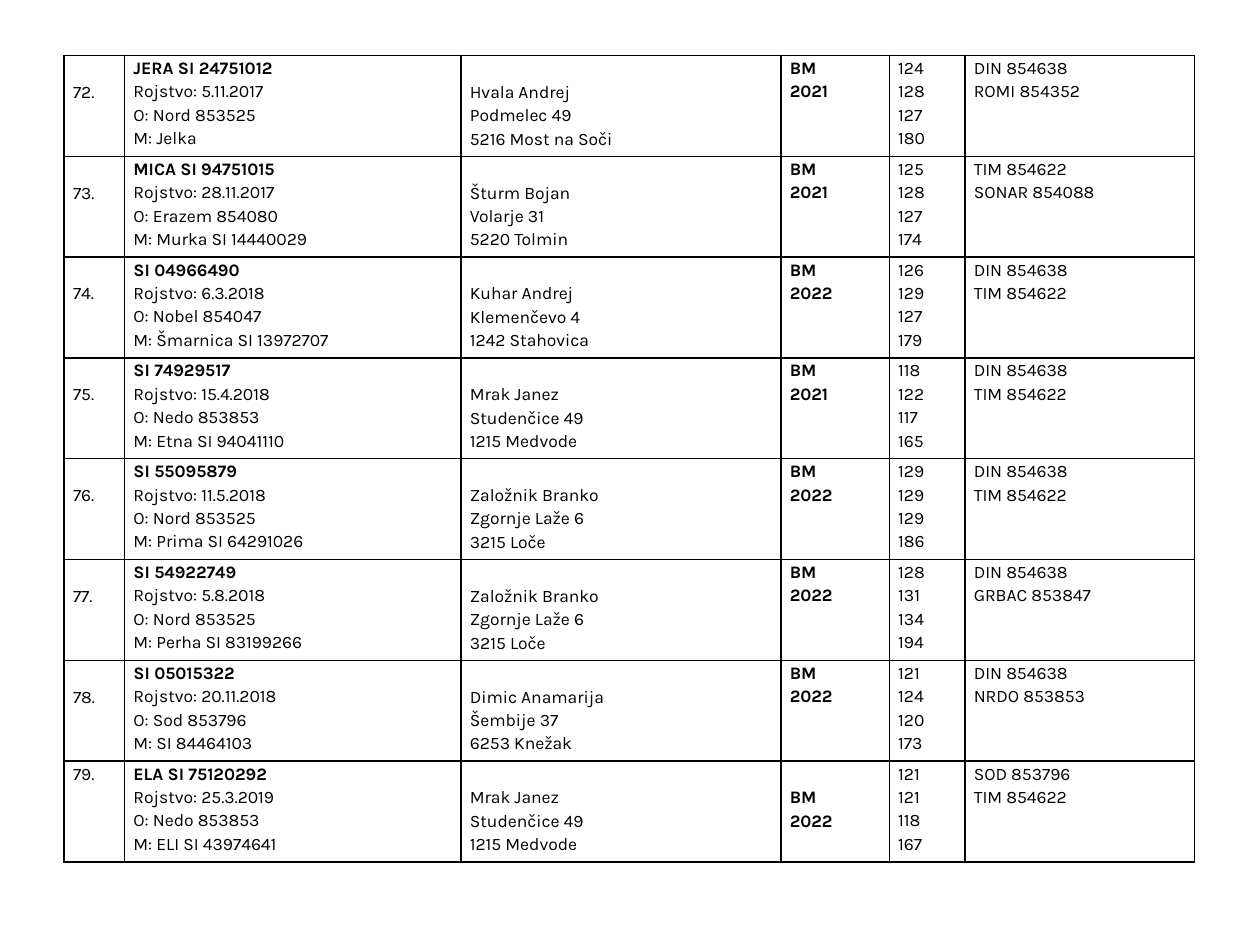
from dataclasses import dataclass

from lxml.etree import SubElement
from pptx import Presentation
from pptx.dml.color import RGBColor
from pptx.enum.text import PP_ALIGN as Align
from pptx.oxml.ns import qn
from pptx.util import Inches, Pt

COLORS = {"ink": "000000", "paper": "FFFFFF"}
FONT = "Karla"
COLUMN_WIDTHS = (0.48, 2.67, 2.54, 0.86, 0.6, 1.82)
ROW_HEIGHT = 0.8
TEXT_LINE = 0.19  # height of one line of text, in inches


@dataclass(frozen=True)
class Animal:
    number: int
    name: str
    born: str
    father: str
    mother: str
    owner: tuple[str, str, str]
    year: int
    scores: tuple[int, int, int, int]
    mates: tuple[str, str]
    number_drop: int = 1  # lines left free above the number
    status_drop: int = 0  # lines left free above the status


DIN, TIM = "DIN 854638", "TIM 854622"
MRAK = ("Mrak Janez", "Studenčice 49", "1215 Medvode")
ZALOZNIK = ("Založnik Branko", "Zgornje Laže 6", "3215 Loče")

ANIMALS = (
    Animal(72, "JERA SI 24751012", "5.11.2017", "Nord 853525", "Jelka",
           ("Hvala Andrej", "Podmelec 49", "5216 Most na Soči"),
           2021, (124, 128, 127, 180), (DIN, "ROMI 854352")),
    Animal(73, "MICA SI 94751015", "28.11.2017", "Erazem 854080", "Murka SI 14440029",
           ("Šturm Bojan", "Volarje 31", "5220 Tolmin"),
           2021, (125, 128, 127, 174), (TIM, "SONAR 854088")),
    Animal(74, "SI 04966490", "6.3.2018", "Nobel 854047", "Šmarnica SI 13972707",
           ("Kuhar Andrej", "Klemenčevo 4", "1242 Stahovica"),
           2022, (126, 129, 127, 179), (DIN, TIM)),
    Animal(75, "SI 74929517", "15.4.2018", "Nedo 853853", "Etna SI 94041110",
           MRAK, 2021, (118, 122, 117, 165), (DIN, TIM)),
    Animal(76, "SI 55095879", "11.5.2018", "Nord 853525", "Prima SI 64291026",
           ZALOZNIK, 2022, (129, 129, 129, 186), (DIN, TIM)),
    Animal(77, "SI 54922749", "5.8.2018", "Nord 853525", "Perha SI 83199266",
           ZALOZNIK, 2022, (128, 131, 134, 194), (DIN, "GRBAC 853847")),
    Animal(78, "SI 05015322", "20.11.2018", "Sod 853796", "SI 84464103",
           ("Dimic Anamarija", "Šembije 37", "6253 Knežak"),
           2022, (121, 124, 120, 173), (DIN, "NRDO 853853")),
    Animal(79, "ELA SI 75120292", "25.3.2019", "Nedo 853853", "ELI SI 43974641",
           MRAK, 2022, (121, 121, 118, 167), ("SOD 853796", TIM),
           number_drop=0, status_drop=1),
)


def write_lines(cell, lines, *, bold_lines: int = 0, drop: int = 0) -> None:
    """Write one paragraph a line, the first bold_lines of them bold."""
    cell.margin_left = cell.margin_right = Inches(0.07)
    cell.margin_top = Inches(drop * TEXT_LINE)
    cell.margin_bottom = 0
    frame = cell.text_frame
    for index, line in enumerate(lines):
        paragraph = frame.add_paragraph() if index else frame.paragraphs[0]
        paragraph.alignment = Align.JUSTIFY
        paragraph.line_spacing = 1.15
        run = paragraph.add_run()
        run.text = str(line)
        run.font.name = FONT
        run.font.size = Pt(10)
        run.font.bold = index < bold_lines
        run.font.color.rgb = RGBColor.from_string(COLORS["ink"])


def style_cell(cell) -> None:
    """Draw the four borders, then the fill that has to follow them."""
    properties = cell._tc.get_or_add_tcPr()
    for side in ("a:lnL", "a:lnR", "a:lnT", "a:lnB"):
        line = SubElement(properties, qn(side), w=str(Pt(1)))
        fill = SubElement(line, qn("a:solidFill"))
        SubElement(fill, qn("a:srgbClr"), val=COLORS["ink"])
    cell.fill.solid()
    cell.fill.fore_color.rgb = RGBColor.from_string(COLORS["paper"])


def fill_row(cells, animal: Animal) -> None:
    number, identity, owner, status, scores, mates = cells
    write_lines(number, [f"{animal.number}."], drop=animal.number_drop)
    write_lines(identity, [animal.name, f"Rojstvo: {animal.born}",
                           f"O: {animal.father}", f"M: {animal.mother}"], bold_lines=1)
    write_lines(owner, animal.owner, drop=1)
    write_lines(status, ["BM", animal.year], bold_lines=2, drop=animal.status_drop)
    write_lines(scores, animal.scores)
    write_lines(mates, animal.mates)
    for cell in cells:
        style_cell(cell)


def main() -> None:
    presentation = Presentation()
    presentation.slide_width, presentation.slide_height = Inches(10), Inches(7.5)
    slide = presentation.slides.add_slide(presentation.slide_layouts[6])

    # Table of animals
    table = slide.shapes.add_table(
        len(ANIMALS), len(COLUMN_WIDTHS), Inches(0.51), Inches(0.44),
        Inches(sum(COLUMN_WIDTHS)), Inches(ROW_HEIGHT * len(ANIMALS))).table
    table.first_row = table.horz_banding = False
    for column, width in zip(table.columns, COLUMN_WIDTHS):
        column.width = Inches(width)
    for row, animal in zip(table.rows, ANIMALS):
        row.height = Inches(ROW_HEIGHT)
        fill_row(list(row.cells), animal)

    presentation.save("out.pptx")


if __name__ == "__main__":
    main()
